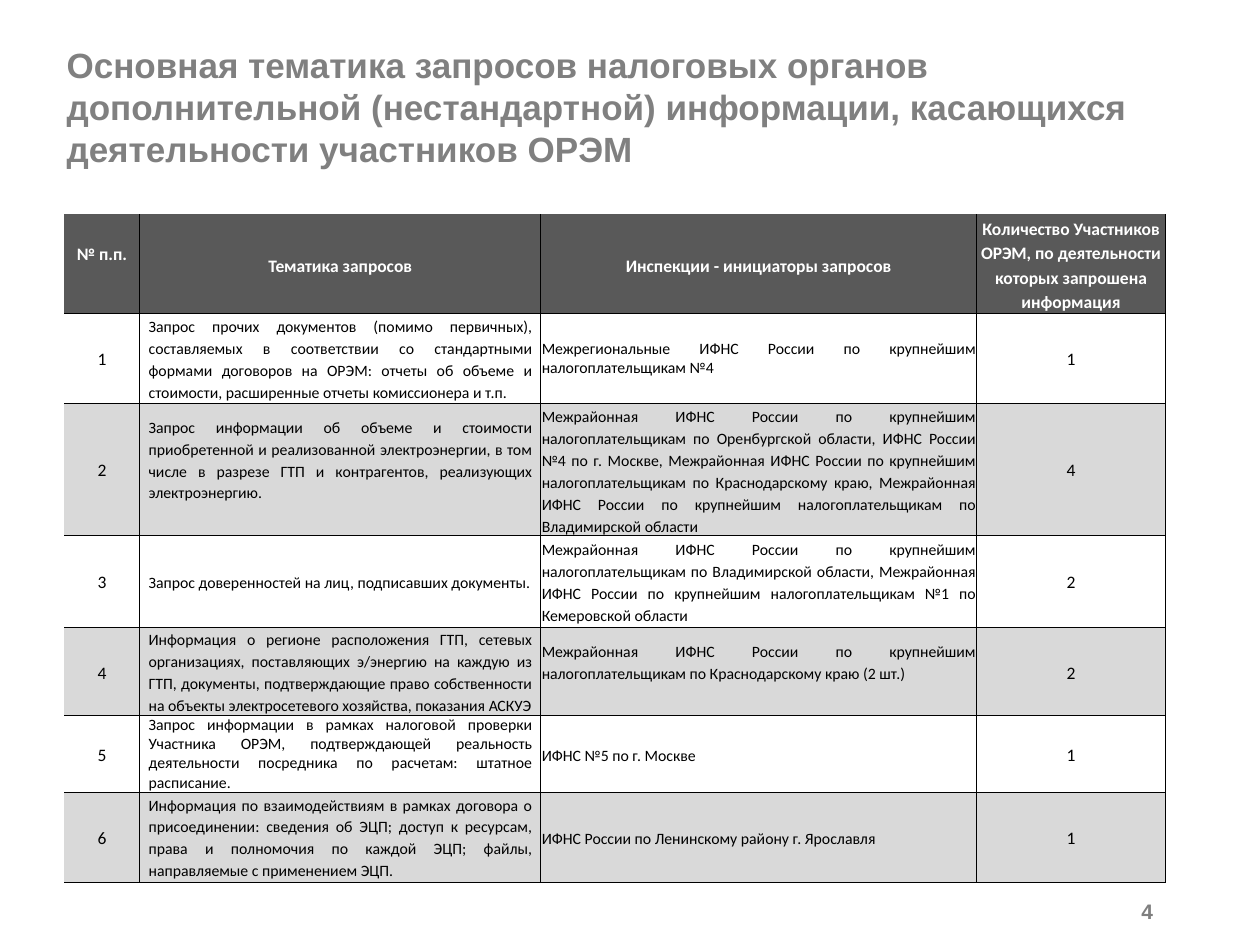
import pptx
import pptx.util
import pptx.dml.color
import pptx.enum.text
from dataclasses import dataclass
from lxml import etree
from pptx.util import Inches

ALIGN = pptx.enum.text.PP_ALIGN
MIDDLE = pptx.enum.text.MSO_ANCHOR.MIDDLE


@dataclass(frozen=True)
class Theme:
    title: str = "808080"
    page: str = "7F7F7F"
    head: str = "595959"
    band: str = "D9D9D9"
    white: str = "FFFFFF"
    black: str = "000000"
    display: str = "Arial"
    body: str = "Calibri"
    big: float = 20
    note: float = 12
    label: float = 10
    small: float = 9
    line: float = 0.5


THEME = Theme()
WIDTHS = [0.6, 3.18, 3.46, 1.5]
HEADS = [
    "№ п.п.",
    "Тематика запросов",
    "Инспекции - инициаторы запросов",
    "Количество Участников ОРЭМ, по деятельности которых запрошена информация",
]
ROWS = [
    ("Запрос прочих документов (помимо первичных), составляемых в соответствии со "
     "стандартными формами договоров на ОРЭМ: отчеты об объеме и стоимости, "
     "расширенные отчеты комиссионера и т.п.",
     "Межрегиональные ИФНС России по крупнейшим налогоплательщикам №4", 1),
    ("Запрос информации об объеме и стоимости приобретенной и реализованной "
     "электроэнергии, в том числе в разрезе ГТП и контрагентов, реализующих "
     "электроэнергию.",
     "Межрайонная ИФНС России по крупнейшим налогоплательщикам по Оренбургской "
     "области, ИФНС России №4 по г. Москве, Межрайонная ИФНС России по крупнейшим "
     "налогоплательщикам по Краснодарскому краю, Межрайонная ИФНС России по "
     "крупнейшим налогоплательщикам по Владимирской области", 4),
    ("Запрос доверенностей на лиц, подписавших документы.",
     "Межрайонная ИФНС России по крупнейшим налогоплательщикам по Владимирской "
     "области, Межрайонная ИФНС России по крупнейшим налогоплательщикам №1 по "
     "Кемеровской области", 2),
    ("Информация о регионе расположения ГТП, сетевых организациях, поставляющих "
     "э/энергию на каждую из ГТП, документы, подтверждающие право собственности на "
     "объекты электросетевого хозяйства, показания АСКУЭ",
     "Межрайонная ИФНС России по крупнейшим налогоплательщикам по Краснодарскому "
     "краю (2 шт.)", 2),
    ("Запрос информации в рамках налоговой проверки Участника ОРЭМ, подтверждающей "
     "реальность деятельности посредника по расчетам: штатное расписание.",
     "ИФНС №5 по г. Москве", 1),
    ("Информация по взаимодействиям в рамках договора о присоединении: сведения об "
     "ЭЦП; доступ к ресурсам, права и полномочия по каждой ЭЦП; файлы, направляемые "
     "с применением ЭЦП.",
     "ИФНС России по Ленинскому району г. Ярославля", 1),
]
HEIGHTS = [0.79, 0.71, 1.05, 0.73, 0.7, 0.61, 0.71]
TIGHT = {(0, 0), (1, 2), (5, 1)}
RAISED = {(0, 0), (2, 1), (4, 2)}


def write(frame, text, *, size, color, font=THEME.body, bold=False,
          align=ALIGN.LEFT, space=1.0):
    frame.word_wrap = True
    para = frame.paragraphs[0]
    para.alignment = align
    para.line_spacing = space
    run = para.add_run()
    run.text = text
    run.font.size = pptx.util.Pt(size)
    run.font.name = font
    run.font.bold = bold
    run.font.color.rgb = pptx.dml.color.RGBColor.from_string(color)


def add_text(slide, text, box, **style):
    frame = slide.shapes.add_textbox(*map(Inches, box)).text_frame
    frame.vertical_anchor = MIDDLE
    write(frame, text, font=THEME.display, bold=True, **style)


def add_edge(cell, side, shown):
    qn = pptx.oxml.ns.qn
    width = str(pptx.util.Pt(THEME.line))
    edge = etree.SubElement(cell._tc.get_or_add_tcPr(), qn(f"a:ln{side}"), w=width)
    if shown:
        fill = etree.SubElement(edge, qn("a:solidFill"))
        etree.SubElement(fill, qn("a:srgbClr"), val=THEME.black)
    else:
        etree.SubElement(edge, qn("a:noFill"))


def fill_cell(cell, text, row, col):
    head = row == 0
    prose = not head and col in (1, 2)
    slim = head or col == 2
    cell.vertical_anchor = MIDDLE
    cell.margin_left = cell.margin_right = Inches(0.01 if slim else 0.07)
    cell.margin_top = Inches(0.01 if slim else 0)
    cell.margin_bottom = Inches(0.16 if (row, col) in RAISED else 0)
    for side, shown in (("L", col > 0), ("R", True), ("T", not head), ("B", True)):
        add_edge(cell, side, shown)
    cell.fill.solid()
    shade = THEME.head if head else THEME.white if row % 2 else THEME.band
    cell.fill.fore_color.rgb = pptx.dml.color.RGBColor.from_string(shade)
    write(cell.text_frame, text,
          size=THEME.small if prose else THEME.label,
          color=THEME.white if head else THEME.black,
          bold=head,
          align=ALIGN.JUSTIFY if prose else ALIGN.CENTER,
          space=1.0 if (row, col) in TIGHT else 1.15)


def add_grid(slide):
    data = [HEADS] + [(str(num), topic, office, str(count))
                      for num, (topic, office, count) in enumerate(ROWS, 1)]
    box = (0.51, 1.7, sum(WIDTHS), sum(HEIGHTS))
    table = slide.shapes.add_table(len(data), len(HEADS), *map(Inches, box)).table
    for col, width in zip(table.columns, WIDTHS):
        col.width = Inches(width)
    for row, height in zip(table.rows, HEIGHTS):
        row.height = Inches(height)
    for row, texts in enumerate(data):
        for col, text in enumerate(texts):
            fill_cell(table.cell(row, col), text, row, col)


def main():
    deck = pptx.Presentation()
    deck.slide_width, deck.slide_height = Inches(10), Inches(7.5)
    slide = deck.slides.add_slide(deck.slide_layouts[6])
    add_text(slide, "Основная тематика запросов налоговых органов дополнительной "
             "(нестандартной) информации, касающихся деятельности участников ОРЭМ",
             (0.43, 0.3, 8.82, 1.09), size=THEME.big, color=THEME.title)
    add_grid(slide)
    add_text(slide, "4", (8.15, 7.06, 1.1, 0.34), size=THEME.note,
             color=THEME.page, align=ALIGN.RIGHT)
    deck.save("out.pptx")


if __name__ == "__main__":
    main()
